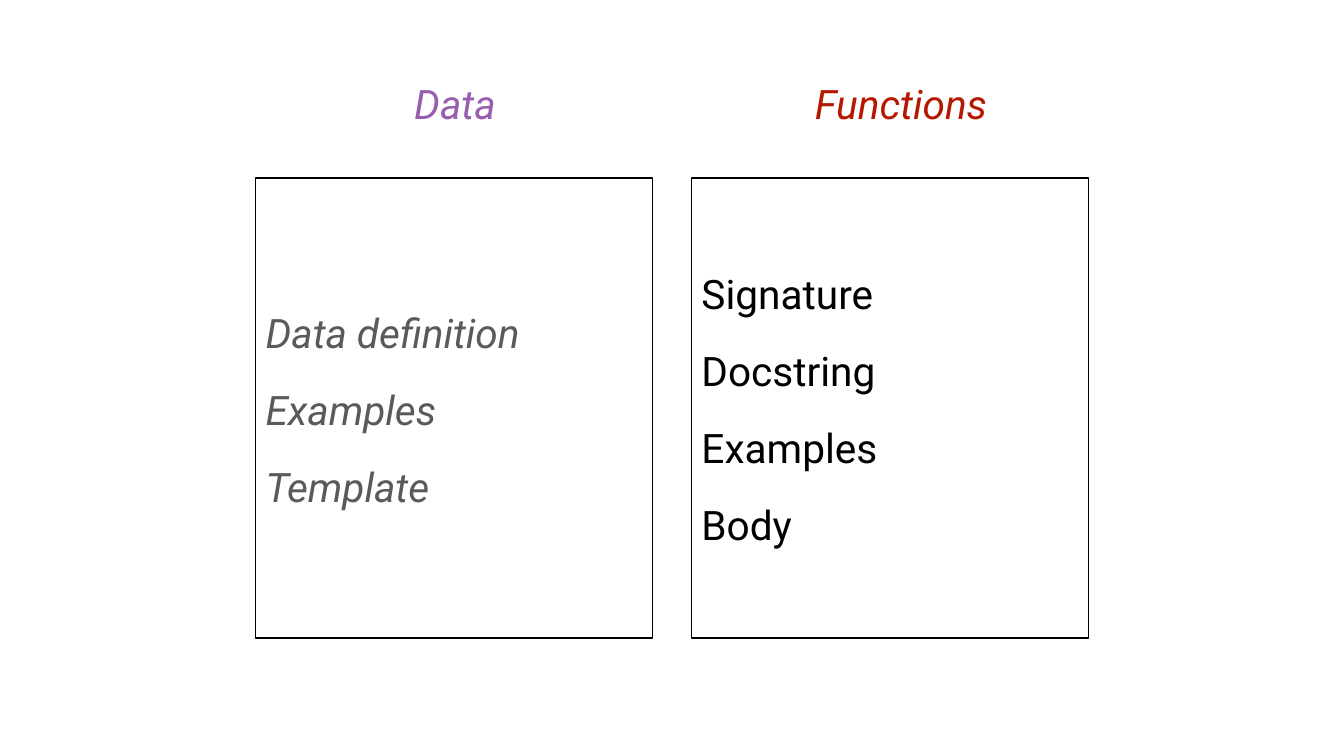
"""Build a slide that sets the data recipe beside the function recipe."""
from lxml import etree
from pptx import Presentation, util as u
from pptx.dml.color import RGBColor
from pptx.enum import text
from pptx.oxml.ns import qn


def add_lines(frame, lines, color, italic, inset):
    frame.margin_left = frame.margin_right = u.Inches(inset)
    frame.margin_top = frame.margin_bottom = u.Inches(inset)
    for number, line in enumerate(lines):
        paragraph = frame.add_paragraph() if number else frame.paragraphs[0]
        paragraph.alignment = text.PP_ALIGN.LEFT
        paragraph.line_spacing = u.Pt(73)
        paragraph.space_before = u.Pt(37)
        properties = paragraph._p.get_or_add_pPr()
        properties.set("marL", "0")
        properties.set("indent", "0")
        etree.SubElement(properties, qn("a:buNone"))
        run = paragraph.add_run()
        run.text = line
        run.font.name = "Roboto"
        run.font.size = u.Pt(58)
        run.font.bold = False
        run.font.italic = italic
        run.font.color.rgb = RGBColor.from_string(color)


deck = Presentation()
deck.slide_width, deck.slide_height = u.Inches(26.67), u.Inches(15)
slide = deck.slides.add_slide(deck.slide_layouts.get_by_name("Comparison"))
title, *panels = slide.placeholders
title.element.getparent().remove(title.element)

first_column, column_step, column_width = 5.07, 8.65, 7.88
recipes = [
    ("Data", "965EAE", 8.12, 1.92,
     ["Data definition", "Examples", "Template"], "5A5A5A", True),
    ("Functions", "B51700", 16.07, 3.71,
     ["Signature", "Docstring", "Examples", "Body"], "000000", False),
]

for column, recipe in enumerate(recipes):
    name, name_color, name_left, name_width, steps, step_color, slanted = recipe
    heading, body = panels[2 * column:2 * column + 2]

    heading.left, heading.top = u.Inches(name_left), u.Inches(1.42)
    heading.width, heading.height = u.Inches(name_width), u.Inches(1.2)
    heading.text_frame.word_wrap = False
    heading.text_frame.auto_size = text.MSO_AUTO_SIZE.SHAPE_TO_FIT_TEXT
    heading.text_frame.vertical_anchor = text.MSO_ANCHOR.TOP
    add_lines(heading.text_frame, [name], name_color, True, 0.1)

    body.left = u.Inches(first_column + column * column_step)
    body.top = u.Inches(3.53)
    body.width, body.height = u.Inches(column_width), u.Inches(9.13)
    body.fill.solid()
    body.fill.fore_color.rgb = RGBColor.from_string("FFFFFF")
    body.line.color.rgb = RGBColor.from_string("000000")
    body.line.width = u.Pt(2)
    body.text_frame.word_wrap = True
    body.text_frame.auto_size = text.MSO_AUTO_SIZE.NONE
    body.text_frame.vertical_anchor = text.MSO_ANCHOR.MIDDLE
    add_lines(body.text_frame, steps, step_color, slanted, 0.2)

deck.save("out.pptx")
